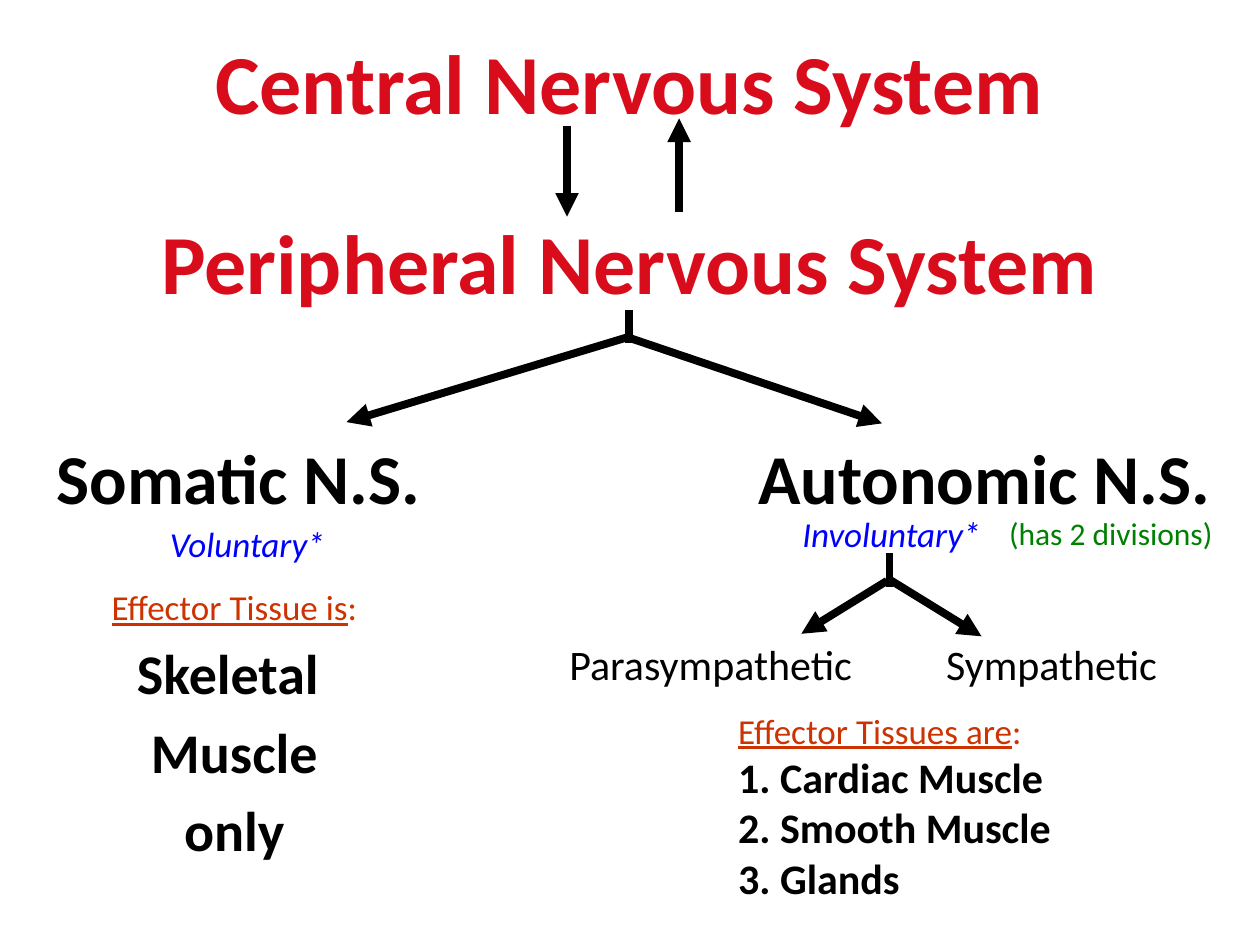
from lxml.etree import SubElement
from pptx import Presentation
from pptx.dml.color import RGBColor
from pptx.enum.shapes import MSO_CONNECTOR
from pptx.enum.text import MSO_ANCHOR, PP_ALIGN
from pptx.oxml.ns import qn
from pptx.util import Inches, Pt

RED, BLACK, BLUE, RUST, GREEN = "D90C1C", "000000", "0000FF", "CC3300", "008000"


def color(value):
    return RGBColor.from_string(value)


def add_text(place, lines, align=PP_ALIGN.LEFT, anchor=MSO_ANCHOR.TOP, hanging=True, spacing=0.2):
    box = page.shapes.add_textbox(*[Inches(length) for length in place])
    frame = box.text_frame
    frame.word_wrap = True
    frame.vertical_anchor = anchor
    for index, (text, size, shade, style) in enumerate(lines):
        para = frame.paragraphs[0] if index == 0 else frame.add_paragraph()
        para.alignment = align
        para.space_before = Pt(size * spacing)
        if hanging:
            properties = para._p.get_or_add_pPr()
            properties.set("marL", str(Inches(0.38)))
            properties.set("indent", str(Inches(-0.38)))
        para.font.name = "Calibri"
        para.font.size = Pt(size)
        para.font.color.rgb = color(shade)
        para.font.bold = style == "bold"
        para.font.italic = style == "italic"
        if style == "underline":
            span = para.add_run()
            span.text = text.rstrip(":")
            span.font.underline = True
            para.add_run().text = ":"
        else:
            para.add_run().text = text


deck = Presentation()
deck.slide_width = Inches(10)
deck.slide_height = Inches(7.5)
page = deck.slides.add_slide(deck.slide_layouts[6])

for top, title in [(0.14, "Central Nervous System"), (1.57, "Peripheral Nervous System")]:
    add_text((0.83, top, 8.33, 1), [(title, 48, RED, "bold")],
             PP_ALIGN.CENTER, MSO_ANCHOR.MIDDLE, hanging=False, spacing=0)

for place, text, size, shade, style in [
    ((0.35, 3.4, 3.32, 0.77), "Somatic N.S.", 40, BLACK, "bold"),
    ((5.92, 3.4, 3.9, 0.72), "Autonomic N.S.", 40, BLACK, "bold"),
    ((1.25, 4.1, 1.75, 0.58), "Voluntary*", 20, BLUE, "italic"),
    ((6.27, 4.02, 1.9, 0.58), "Involuntary*", 20, BLUE, "italic"),
    ((7.91, 4.03, 2.05, 0.43), "(has 2 divisions)", 18, GREEN, "plain"),
    ((4.42, 5.02, 2.7, 0.64), "Parasympathetic", 24, BLACK, "plain"),
    ((7.41, 5.02, 2.41, 0.48), "Sympathetic", 24, BLACK, "plain"),
]:
    add_text(place, [(text, size, shade, style)])

somatic = [("Effector Tissue is:", 20, RUST, "underline")]
somatic += [(word, 32, BLACK, "bold") for word in ("Skeletal ", "Muscle", "only")]
add_text((0.44, 4.6, 2.84, 2.7), somatic, PP_ALIGN.CENTER)

autonomic = [("Effector Tissues are:", 20, RUST, "underline")]
for number, tissue in enumerate(("Cardiac Muscle", "Smooth Muscle", "Glands"), 1):
    autonomic.append((f"{number}. {tissue}", 24, BLACK, "bold"))
add_text((5.76, 5.58, 4.05, 1.65), autonomic, spacing=0)

for start_x, start_y, end_x, end_y, arrow in [
    (4.5, 1, 4.5, 1.72, True),
    (5.39, 1.68, 5.39, 0.94, True),
    (4.99, 2.46, 4.99, 2.72, False),
    (4.97, 2.68, 2.75, 3.35, True),
    (4.99, 2.68, 7, 3.36, True),
    (7.06, 4.39, 7.06, 4.66, False),
    (7.04, 4.61, 6.36, 5.03, True),
    (7.06, 4.6, 7.79, 5.05, True),
]:
    connector = page.shapes.add_connector(
        MSO_CONNECTOR.STRAIGHT, Inches(start_x), Inches(start_y), Inches(end_x), Inches(end_y))
    connector.line.color.rgb = color(BLACK)
    connector.line.width = Pt(4.5)
    if arrow:
        SubElement(connector.line._get_or_add_ln(), qn("a:tailEnd"), type="triangle")
    SubElement(connector._element.spPr, qn("a:effectLst"))

deck.save("out.pptx")
